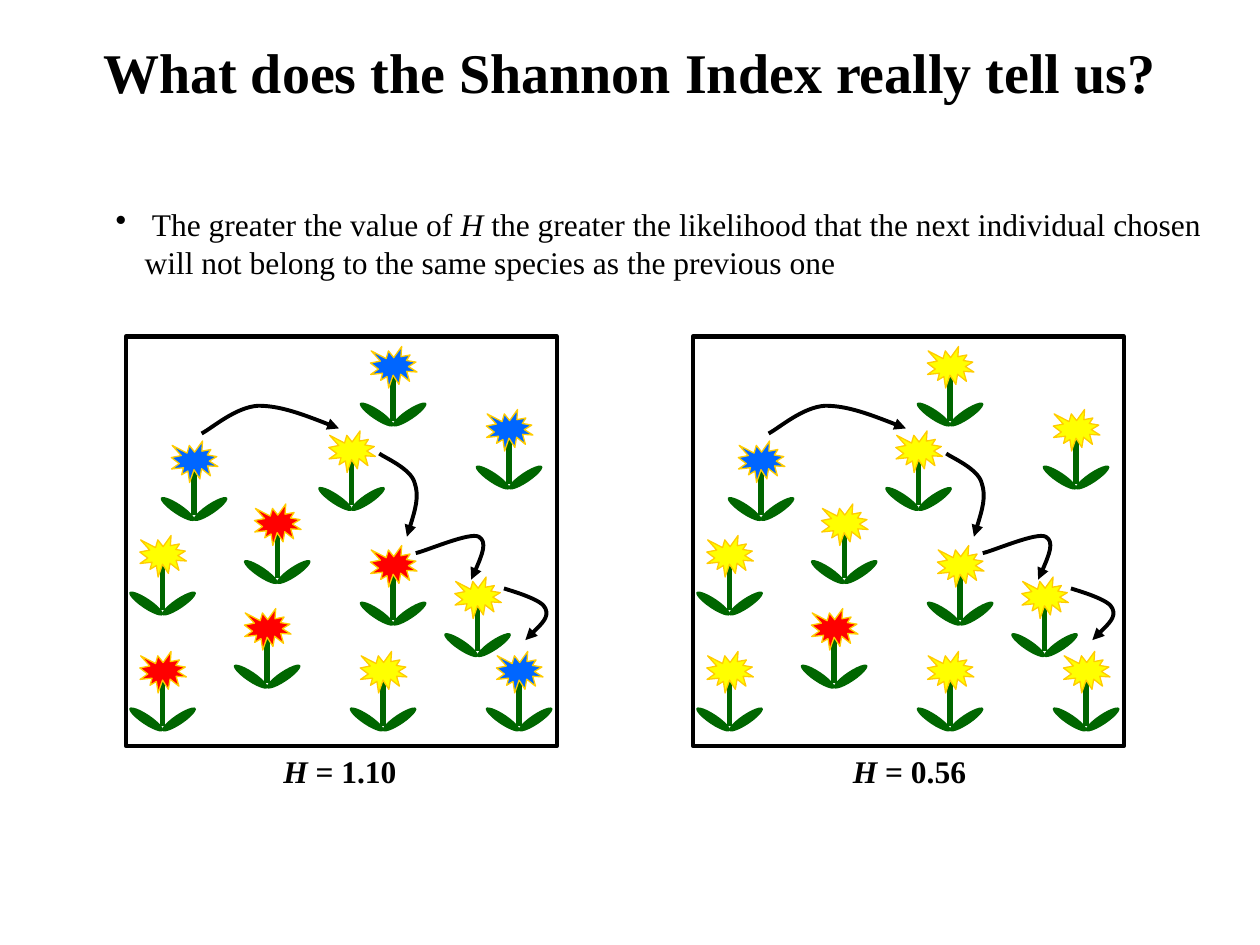
from dataclasses import dataclass

from lxml.etree import SubElement
from pptx import Presentation
from pptx.dml.color import RGBColor
from pptx.enum.shapes import MSO_CONNECTOR, MSO_SHAPE
from pptx.enum.text import MSO_ANCHOR, MSO_AUTO_SIZE, PP_ALIGN
from pptx.oxml.ns import qn
from pptx.util import Inches, Pt


@dataclass(frozen=True)
class Theme:
    font: str = "Times New Roman"
    title_size: int = 32
    body_size: int = 18
    ink: RGBColor = RGBColor(0x00, 0x00, 0x00)
    leaf: RGBColor = RGBColor(0x00, 0x66, 0x00)
    petal_edge: RGBColor = RGBColor(0xFF, 0xCC, 0x00)
    blue: RGBColor = RGBColor(0x00, 0x66, 0xFF)
    red: RGBColor = RGBColor(0xFF, 0x00, 0x00)
    yellow: RGBColor = RGBColor(0xFF, 0xFF, 0x00)


THEME = Theme()
SPECIES = {"B": THEME.blue, "R": THEME.red, "Y": THEME.yellow}
PLOT_WIDTH, PLOT_HEIGHT = 3.42, 3.25

# Flower positions, relative to the plot's top left corner
FLOWERS = [
    (0.36, 0.83), (0.94, 2.16), (1.61, 0.75), (1.86, 2.5),
    (2.61, 1.91), (2.94, 2.5), (1.94, 0.08), (0.11, 2.5),
    (1.94, 1.66), (0.11, 1.58), (2.86, 0.58), (1.02, 1.33),
]
TOP_FLOWER = 6

# Each walk: the arrow tip, then two Bézier segments of three points
WALKS = [
    [(3.17, 2.41), (3.26, 2.32), (3.36, 2.23), (3.33, 2.16),
     (3.31, 2.09), (3.06, 2.02), (3.0, 2.0)],
    [(2.74, 1.93), (2.81, 1.78), (2.87, 1.63), (2.8, 1.59),
     (2.73, 1.55), (2.39, 1.7), (2.3, 1.72)],
    [(2.23, 1.59), (2.28, 1.43), (2.33, 1.27), (2.29, 1.16),
     (2.26, 1.05), (2.05, 0.96), (2.01, 0.93)],
    [(1.69, 0.73), (1.46, 0.64), (1.23, 0.55), (1.05, 0.55),
     (0.87, 0.56), (0.68, 0.73), (0.6, 0.77)],
]


def add_run(paragraph, text, size, bold=False, italic=False):
    run = paragraph.add_run()
    run.text = text
    run.font.name = THEME.font
    run.font.size = Pt(size)
    run.font.bold = bold
    run.font.italic = italic
    run.font.color.rgb = THEME.ink


def set_line(shape, color, width):
    shape.line.color.rgb = color
    shape.line.width = Pt(width)


def add_title(slide, left, top, width, height):
    title = slide.shapes.title
    title.left, title.top = Inches(left), Inches(top)
    title.width, title.height = Inches(width), Inches(height)
    frame = title.text_frame
    frame.auto_size = MSO_AUTO_SIZE.NONE
    frame.vertical_anchor = MSO_ANCHOR.TOP
    paragraph = frame.paragraphs[0]
    paragraph.alignment = PP_ALIGN.CENTER
    add_run(paragraph, "What does the Shannon Index really tell us?",
            THEME.title_size, bold=True)


def add_text_box(slide, left, top, width, height, wrap):
    """Return the first paragraph of a new text box."""
    box = slide.shapes.add_textbox(Inches(left), Inches(top), Inches(width), Inches(height))
    box.text_frame.word_wrap = wrap
    return box.text_frame.paragraphs[0]


def add_statement(slide, left, top, width, height):
    paragraph = add_text_box(slide, left, top, width, height, wrap=True)
    properties = paragraph._p.get_or_add_pPr()
    properties.set("marL", str(Inches(0.23)))
    properties.set("indent", str(-Inches(0.23)))
    SubElement(properties, qn("a:buChar")).set("char", "•")
    add_run(paragraph, " The greater the value of ", THEME.body_size)
    add_run(paragraph, "H", THEME.body_size, italic=True)
    add_run(paragraph, " the greater the likelihood that the next individual chosen "
            "will not belong to the same species as the previous one", THEME.body_size)


def add_flower(slide, left, top, color):
    """Group two leaves, a stem and a bloom; left and top are the bloom's corner."""
    shapes = slide.shapes.add_group_shape().shapes
    for offset, rotation in ((0.01, 304), (0.27, 56)):
        leaf = shapes.add_shape(MSO_SHAPE.OVAL, Inches(left + offset), Inches(top + 0.38),
                                Inches(0.08), Inches(0.32))
        leaf.rotation = rotation
        leaf.shadow.inherit = False
        leaf.fill.solid()
        leaf.fill.fore_color.rgb = THEME.leaf
        leaf.line.fill.background()

    stem_x = Inches(left + 0.18)
    stem = shapes.add_connector(MSO_CONNECTOR.STRAIGHT, stem_x, Inches(top + 0.21),
                                stem_x, Inches(top + 0.59))
    set_line(stem, THEME.leaf, 3)
    SubElement(stem._element.spPr, qn("a:effectLst"))

    bloom = shapes.add_shape(MSO_SHAPE.EXPLOSION1, Inches(left), Inches(top),
                             Inches(0.37), Inches(0.33))
    bloom.shadow.inherit = False
    bloom.fill.solid()
    bloom.fill.fore_color.rgb = color
    set_line(bloom, THEME.petal_edge, 0.75)


def add_walk(slide, left, top, points):
    """Draw a curved arrow whose tip is the first point."""
    start, *rest = [(Inches(left + x), Inches(top + y)) for x, y in points]
    builder = slide.shapes.build_freeform(*start)
    builder.add_line_segments(rest, close=False)
    arrow = builder.convert_to_shape()
    arrow.shadow.inherit = False
    arrow.fill.background()
    set_line(arrow, THEME.ink, 2.25)
    SubElement(arrow.line._get_or_add_ln(), qn("a:headEnd")).set("type", "triangle")

    # Turn every three straight segments into one Bézier curve
    path = next(arrow._element.iter(qn("a:path")))
    segments = path.findall(qn("a:lnTo"))
    for first in range(0, len(segments), 3):
        curve = SubElement(path, qn("a:cubicBezTo"))
        for segment in segments[first:first + 3]:
            curve.append(segment[0])
            path.remove(segment)


def add_plot(slide, left, top, species, top_flower_x, index, label_x):
    """Draw a framed plot of flowers with its walks and its index below."""
    frame = slide.shapes.add_shape(MSO_SHAPE.RECTANGLE, Inches(left), Inches(top),
                                   Inches(PLOT_WIDTH), Inches(PLOT_HEIGHT))
    frame.shadow.inherit = False
    frame.fill.background()
    set_line(frame, THEME.ink, 2.5)
    for number, ((x, y), code) in enumerate(zip(FLOWERS, species)):
        if number == TOP_FLOWER:
            x = top_flower_x
        add_flower(slide, left + x, top + y, SPECIES[code])
    for points in WALKS:
        add_walk(slide, left, top, points)
    label = add_text_box(slide, left + label_x, top + PLOT_HEIGHT, 1.1, 0.4, wrap=False)
    add_run(label, "H", THEME.body_size, bold=True, italic=True)
    add_run(label, f" = {index}", THEME.body_size, bold=True)


def main():
    presentation = Presentation()
    presentation.slide_width, presentation.slide_height = Inches(10), Inches(7.5)
    slide = presentation.slides.add_slide(presentation.slide_layouts[5])
    add_title(slide, 0, 0.25, 10, 0.63)
    add_statement(slide, 0.82, 1.58, 8.85, 0.7)
    add_plot(slide, 1, 2.67, "BRYYYBBRRYBR", 1.94, "1.10", 1.15)
    add_plot(slide, 5.5, 2.67, "BRYYYYYYYYYY", 1.86, "0.56", 1.17)
    presentation.save("out.pptx")


if __name__ == "__main__":
    main()
